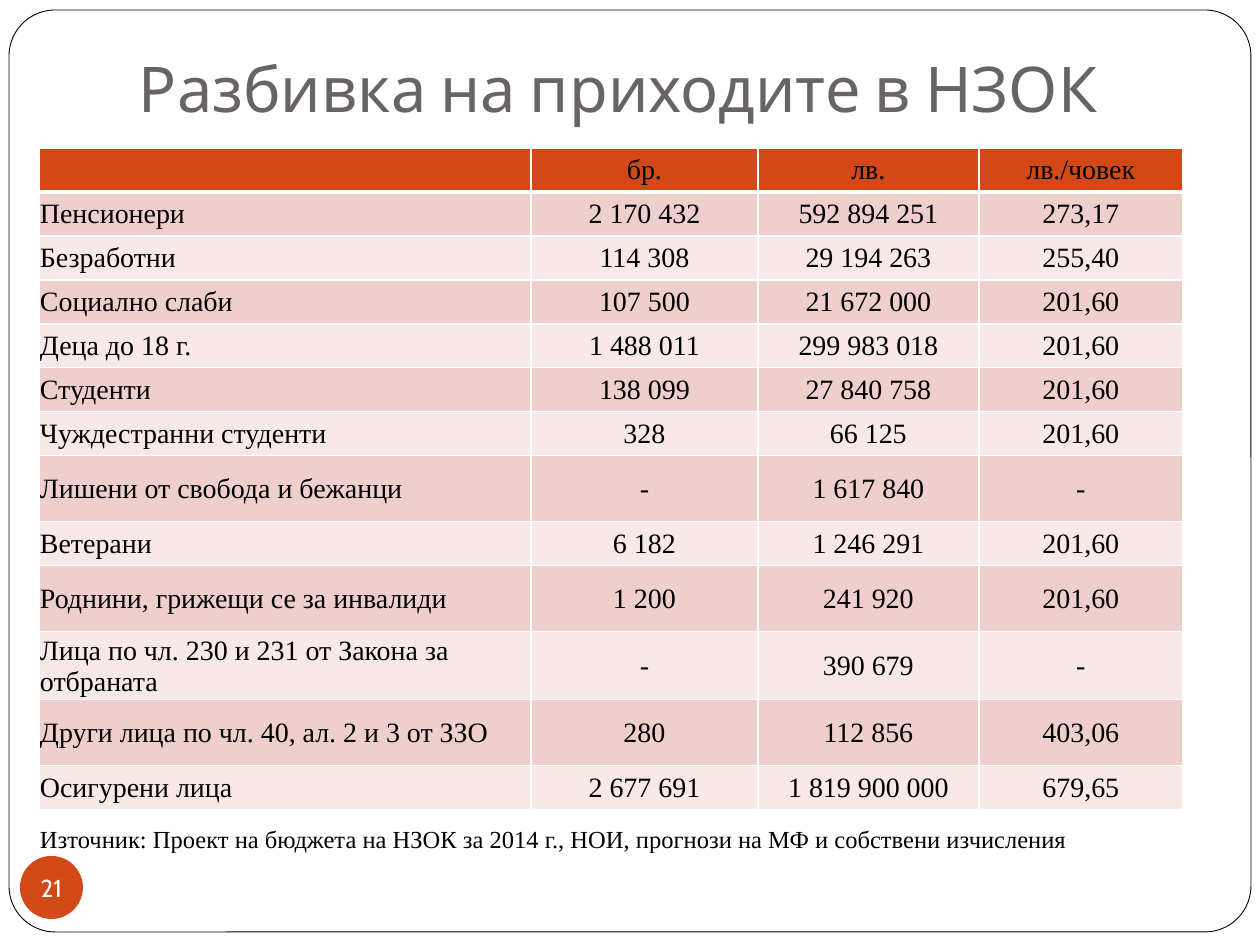
from lxml import etree
from pptx import Presentation
from pptx import util as u
from pptx.dml.color import RGBColor
from pptx.enum import shapes, text
from pptx.oxml.ns import qn

PX = 914400 // 126
ACCENT, INK, WHITE = "D34817", "000000", "FFFFFF"
BANDS = ("EFCFCC", "F7E9E8")
HEADING, BODY = "Cabin", "Times New Roman"
COLUMNS = (492, 227, 221, 204)
ROW, TALL_ROW = 44, 66
TALL_ROWS = (7, 9, 10, 11)

INCOME = [
    ("", "бр.", "лв.", "лв./човек"),
    ("Пенсионери", "2 170 432", "592 894 251", "273,17"),
    ("Безработни", "114 308", "29 194 263", "255,40"),
    ("Социално слаби", "107 500", "21 672 000", "201,60"),
    ("Деца до 18 г.", "1 488 011", "299 983 018", "201,60"),
    ("Студенти", "138 099", "27 840 758", "201,60"),
    ("Чуждестранни студенти", "328", "66 125", "201,60"),
    ("Лишени от свобода и бежанци", "-", "1 617 840", "-"),
    ("Ветерани", "6 182", "1 246 291", "201,60"),
    ("Роднини, грижещи се за инвалиди", "1 200", "241 920", "201,60"),
    ("Лица по чл. 230 и 231 от Закона за отбраната", "-", "390 679", "-"),
    ("Други лица по чл. 40, ал. 2 и 3 от ЗЗО", "280", "112 856", "403,06"),
    ("Осигурени лица", "2 677 691", "1 819 900 000", "679,65"),
]
SOURCE = ("Източник: Проект на бюджета на НЗОК за 2014 г., НОИ, "
          "прогнози на МФ и собствени изчисления")


def px(*lengths):
    return [u.Emu(length * PX) for length in lengths]


def color(value):
    return RGBColor.from_string(value)


def paint(target, value):
    target.fill.solid()
    target.fill.fore_color.rgb = color(value)


def write(frame, words, size, font, ink, align=text.PP_ALIGN.LEFT):
    paragraph = frame.paragraphs[0]
    paragraph.alignment = align
    run = paragraph.add_run()
    run.text = words
    run.font.size = u.Pt(size)
    run.font.name = font
    run.font.color.rgb = color(ink)


def set_margins(target, left, top, right, bottom):
    (target.margin_left, target.margin_top,
     target.margin_right, target.margin_bottom) = px(left, top, right, bottom)


def add_preset(slide, preset, box, fill):
    shape = slide.shapes.add_shape(preset, *px(*box))
    shape.shadow.inherit = False
    paint(shape, fill)
    return shape


def add_title(slide, words):
    frame = slide.shapes.add_textbox(*px(126, 38, 1071, 100)).text_frame
    frame.word_wrap = True
    frame.vertical_anchor = text.MSO_ANCHOR.BOTTOM
    set_margins(frame, 13, 6, 13, 13)
    write(frame, words, 36, HEADING, "696464")


def set_borders(cell, bottom_width):
    properties = cell._tc.get_or_add_tcPr()
    widths = {"a:lnL": 1, "a:lnR": 1, "a:lnT": 1, "a:lnB": bottom_width}
    for position, (side, width) in enumerate(widths.items()):
        line = etree.Element(qn(side), w=str(u.Pt(width)))
        fill = etree.SubElement(line, qn("a:solidFill"))
        etree.SubElement(fill, qn("a:srgbClr"), val=WHITE)
        properties.insert(position, line)


def style_cell(cell, fill, bottom_width=1, anchor=text.MSO_ANCHOR.MIDDLE):
    paint(cell, fill)
    set_borders(cell, bottom_width)
    set_margins(cell, 1, 1, 1, 0)
    cell.vertical_anchor = anchor


def add_income_table(slide):
    heights = [TALL_ROW if r in TALL_ROWS else ROW for r in range(len(INCOME))]
    heights.append(ROW)
    table = slide.shapes.add_table(
        len(heights), len(COLUMNS),
        *px(39, 148, sum(COLUMNS), sum(heights))).table
    table.first_row = table.horz_banding = False
    for column, width in zip(table.columns, px(*COLUMNS)):
        column.width = width
    for row, height in zip(table.rows, px(*heights)):
        row.height = height

    # Header and banded rows
    for r, values in enumerate(INCOME):
        for c, value in enumerate(values):
            cell = table.cell(r, c)
            style_cell(cell, BANDS[(r - 1) % 2] if r else ACCENT, 1 if r else 3)
            if value:
                align = text.PP_ALIGN.CENTER if c else text.PP_ALIGN.LEFT
                write(cell.text_frame, value, 16, BODY, INK, align)

    # Source line across all columns
    last = len(INCOME)
    for c in range(len(COLUMNS)):
        style_cell(table.cell(last, c), WHITE, anchor=text.MSO_ANCHOR.BOTTOM)
    source = table.cell(last, 0)
    source.merge(table.cell(last, len(COLUMNS) - 1))
    write(source.text_frame, SOURCE, 14, BODY, INK)


def add_page_number(slide, number):
    badge = add_preset(slide, shapes.MSO_SHAPE.OVAL, (20, 856, 63, 63), ACCENT)
    badge.line.fill.background()
    frame = badge.text_frame
    frame.word_wrap = False
    frame.vertical_anchor = text.MSO_ANCHOR.MIDDLE
    set_margins(frame, 0, 0, 0, 0)
    write(frame, number, 14, HEADING, WHITE, text.PP_ALIGN.CENTER)


def main():
    deck = Presentation()
    deck.slide_width, deck.slide_height = px(1260, 945)
    slide = deck.slides.add_slide(deck.slide_layouts[6])

    # Rounded page frame
    border = add_preset(slide, shapes.MSO_SHAPE.ROUNDED_RECTANGLE,
                        (9, 10, 1242, 922), WHITE)
    border.adjustments[0] = 0.05
    border.line.color.rgb = color(INK)
    border.line.width = u.Pt(0.5)

    add_title(slide, "Разбивка на приходите в НЗОК")
    add_income_table(slide)
    add_page_number(slide, "21")
    deck.save("out.pptx")


if __name__ == "__main__":
    main()
